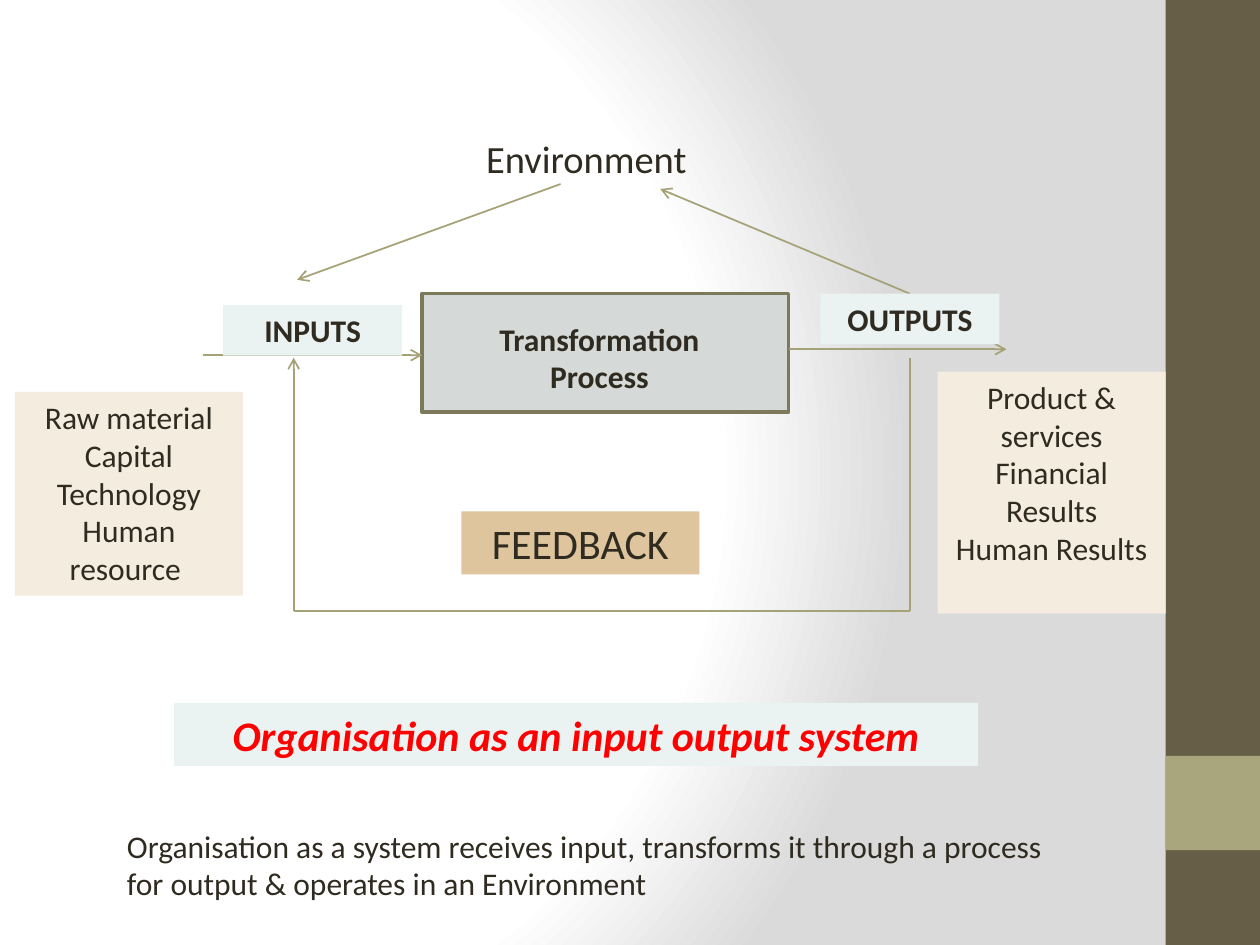
from lxml.etree import SubElement
from pptx import Presentation
from pptx.dml.color import RGBColor
from pptx.enum.shapes import MSO_CONNECTOR, MSO_SHAPE
from pptx.enum.text import MSO_ANCHOR, MSO_AUTO_SIZE, PP_ALIGN
from pptx.oxml import parse_xml
from pptx.oxml.ns import nsdecls, qn
from pptx.util import Cm, Pt

COLORS = {
    "white": "FFFFFF", "grey": "DADADA", "ink": "2F2B20", "red": "FF0000",
    "dark": "675E47", "olive": "A9A57C", "line": "A6A278", "edge": "7D7A5C",
    "core": "D5DAD8", "mint": "EBF2F2", "tan": "DEC59E", "cream": "F4ECDF",
}
FONT = "Calibri"

# Lengths in cm: left, top, width, height
WIDE, HIGH = 25.4, 19.05
SIDE, BAND = 23.5, 1.9
HEAD = ("Environment", (1.09, 2.59, 21.16, 14.66))
PANELS = [
    ((SIDE, 0, BAND, HIGH), "dark", None),
    ((SIDE, 15.24, BAND, BAND), "olive", None),
    ((8.51, 5.92, 7.39, 2.39), "core", "edge"),
]

# Feedback loop corners, then each line: from, to, has arrowhead
LEFT, RIGHT, TOP, BASE = 5.92, 18.34, 7.21, 12.32
LINES = [
    ((4.09, 7.16), (8.51, 7.16), True),
    ((15.9, 7.04), (20.29, 7.04), True),
    ((LEFT, BASE), (LEFT, TOP), True),
    ((RIGHT, 5.92), (13.31, 3.81), True),
    ((11.3, 3.71), (5.99, 5.64), True),
    ((RIGHT, TOP), (RIGHT, BASE), False),
    ((RIGHT, BASE), (LEFT, BASE), False),
]

# Paragraphs, box, fill, size and font changes
LABELS = [
    (["Transformation Process"], (9.09, 6.32, 5.99, 1.8), None, 18, {"bold": True}),
    (["OUTPUTS"], (16.54, 5.92, 3.61, 1.02), "mint", 18, {"bold": True}),
    (["FEEDBACK"], (9.3, 10.31, 4.8, 1.27), "tan", 24, {}),
    (["INPUTS"], (4.5, 6.15, 3.61, 1.02), "mint", 18, {"bold": True}),
    (["Organisation as an input output system"], (3.51, 14.17, 16.21, 1.27),
     "mint", 24, {"bold": True, "italic": True, "color": "red"}),
    (["Organisation as a system receives input, transforms it through a process "
      "for output & operates in an Environment"], (2.31, 16.54, 19.61, 1.8),
     None, 18, {"align": PP_ALIGN.LEFT}),
    (["Raw material", "Capital", "Technology", "Human resource "],
     (0.3, 7.9, 4.6, 4.11), "cream", 18, {}),
    (["Product & services", "Financial Results", "Human Results"],
     (18.9, 7.49, 4.6, 4.88), "cream", 18, {}),
]


def rgb(name):
    return RGBColor.from_string(COLORS[name])


def write(frame, texts, size, bold=False, italic=False, color="ink",
          align=PP_ALIGN.CENTER):
    frame.word_wrap = True
    frame.auto_size = MSO_AUTO_SIZE.NONE
    frame.vertical_anchor = MSO_ANCHOR.TOP
    frame.text = "\n".join(texts)
    for para in frame.paragraphs:
        para.alignment = align
        font = para.font
        font.name, font.size = FONT, Pt(size)
        font.bold, font.italic = bold, italic
        font.color.rgb = rgb(color)


def panel(box, fill, edge=None):
    shape = slide.shapes.add_shape(MSO_SHAPE.RECTANGLE, *map(Cm, box))
    shape.shadow.inherit = False
    shape.fill.solid()
    shape.fill.fore_color.rgb = rgb(fill)
    if edge:
        shape.line.color.rgb = rgb(edge)
        shape.line.width = Pt(2)
    else:
        shape.line.fill.background()
    return shape


def link(start, end, arrow):
    line = slide.shapes.add_connector(
        MSO_CONNECTOR.STRAIGHT, *map(Cm, start + end))
    line.line.color.rgb = rgb("line")
    line.line.width = Pt(1)
    if arrow:
        SubElement(line.line._get_or_add_ln(), qn("a:tailEnd"), type="arrow")
    SubElement(line._element.spPr, qn("a:effectLst"))


deck = Presentation()
deck.slide_width, deck.slide_height = Cm(WIDE), Cm(HIGH)
slide = deck.slides.add_slide(deck.slide_layouts[1])

# Background glow
slide.background.fill.gradient()
grad = slide._element.find(".//" + qn("a:gradFill"))
stops = "".join(
    f'<a:gs pos="{pos}000"><a:srgbClr val="{COLORS[name]}"/></a:gs>'
    for pos, name in [(0, "white"), (75, "white"), (100, "grey")])
grad.getparent().replace(grad, parse_xml(
    f'<a:gradFill {nsdecls("a")} rotWithShape="1"><a:gsLst>{stops}</a:gsLst>'
    '<a:path path="circle"><a:fillToRect l="20000" t="50000" r="100000" '
    'b="50000"/></a:path></a:gradFill>'))

# Environment heading, in the body placeholder
title, body = slide.placeholders
title._element.getparent().remove(title._element)
text, box = HEAD
body.left, body.top, body.width, body.height = map(Cm, box)
write(body.text_frame, [text], 22)
props = body.text_frame.paragraphs[0]._p.get_or_add_pPr()
props.set("marL", str(Cm(0.3)))
props.set("indent", "0")
props.insert_element_before(props.makeelement(qn("a:buNone")), "a:defRPr")

# Side bars and process box
for spec_row in PANELS:
    panel(*spec_row)

# Flow lines
for row in LINES:
    link(*row)

# Labels
for texts, box, fill, size, style in LABELS:
    if fill:
        shape = panel(box, fill)
    else:
        shape = slide.shapes.add_textbox(*map(Cm, box))
    write(shape.text_frame, texts, size, **style)

deck.save("out.pptx")
